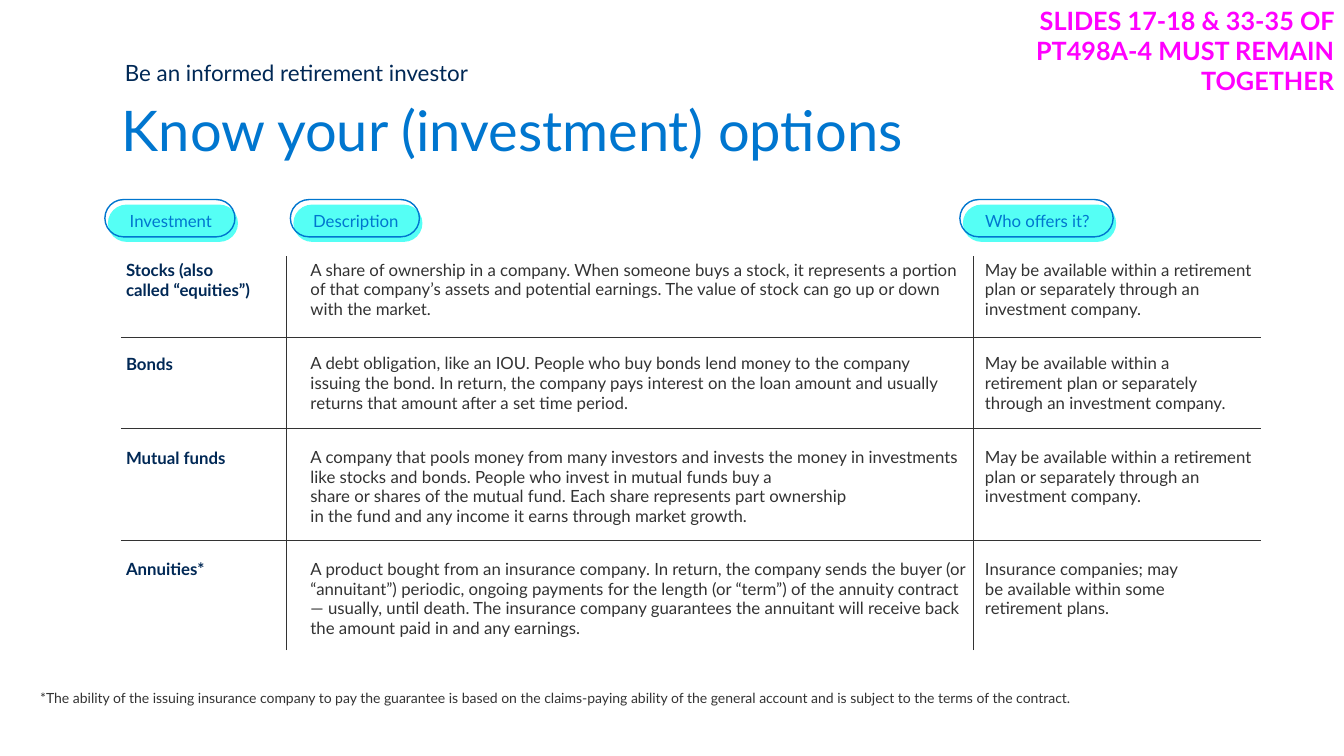
from pptx import Presentation
from pptx.dml.color import RGBColor
from pptx.enum.shapes import MSO_CONNECTOR, MSO_SHAPE
from pptx.enum.text import PP_ALIGN
from pptx.oxml.ns import qn
from pptx.util import Inches, Pt
from lxml import etree

LINE = MSO_CONNECTOR.STRAIGHT
PILL = MSO_SHAPE.ROUNDED_RECTANGLE
LEFT, MID, RIGHT = PP_ALIGN.LEFT, PP_ALIGN.CENTER, PP_ALIGN.RIGHT
NAVY = RGBColor(0x00, 0x28, 0x55)
BLUE = RGBColor(0x00, 0x76, 0xCF)
AQUA = RGBColor(0x55, 0xFF, 0xF5)
GRAY = RGBColor(0x33, 0x33, 0x33)
PINK = RGBColor(0xFF, 0x00, 0xFF)

deck = Presentation()
deck.slide_width, deck.slide_height = Inches(13.33), Inches(7.5)
slide = deck.slides.add_slide(deck.slide_layouts[6])
shapes = slide.shapes


def style(para, size, color, bold=False):
    para.font.name = "Lato"
    para.font.size = Pt(size)
    para.font.color.rgb = color
    para.font.bold = bold


def label(text, box, size, color, bold=False, align=LEFT):
    frame = shapes.add_textbox(*map(Inches, box)).text_frame
    frame.word_wrap = True
    para = frame.paragraphs[0]
    para.text = text
    para.alignment = align
    style(para, size, color, bold)
    return para


label("*The ability of the issuing insurance company to pay the guarantee is based on "
      "the claims-paying ability of the general account and is subject to the terms of "
      "the contract.", (0.3, 6.79, 11.78, 0.27), 10, GRAY)
label("Be an informed retirement investor", (1.14, 0.54, 6.01, 0.58), 16, NAVY)
title = label("Know your (investment) options", (1.11, 0.87, 11.09, 1.03), 40, BLUE)
title.line_spacing = Pt(50)

fund = ("May be available within a retirement plan or separately "
        "through an investment company.")
rows = [
    ("Stocks (also \vcalled “equities”)",
     "A share of ownership in a company. When someone buys a stock, it represents a "
     "portion of that company’s assets and potential earnings. The value of stock can "
     "go up or down with the market.", fund),
    ("Bonds",
     "A debt obligation, like an IOU. People who buy bonds lend money to the company "
     "issuing the bond. In return, the company pays interest on the loan amount and "
     "usually returns that amount after a set time period.", fund),
    ("Mutual funds",
     "A company that pools money from many investors and invests the money in "
     "investments like stocks and bonds. People who invest in mutual funds buy a \v"
     "share or shares of the mutual fund. Each share represents part ownership \v"
     "in the fund and any income it earns through market growth.", fund),
    ("Annuities*",
     "A product bought from an insurance company. In return, the company sends the "
     "buyer (or “annuitant”) periodic, ongoing payments for the length (or “term”) of "
     "the annuity contract — usually, until death. The insurance company guarantees "
     "the annuitant will receive back the amount paid in and any earnings.",
     "Insurance companies; may \vbe available within some \vretirement plans."),
]
wide = (1.87, 6.69, 3.01)
tall = (0.93, 0.93, 1.11, 1.37)
gaps = (0.09, 0.35, 0.09, 0.09)
table = shapes.add_table(len(rows), len(wide), Inches(1.15), Inches(2.51),
                         Inches(sum(wide)), Inches(sum(tall))).table
table.first_row = table.horz_banding = False
for col, width in zip(table.columns, wide):
    col.width = Inches(width)
for r, (row, height, gap) in enumerate(zip(rows, tall, gaps)):
    table.rows[r].height = Inches(height)
    for c, text in enumerate(row):
        cell = table.cell(r, c)
        cell.fill.background()
        cell.margin_left = Inches(0.06 if c else 0.1)
        cell.margin_right = Inches(gap)
        cell.margin_top, cell.margin_bottom = Inches(0.07), Inches(0.13)
        para = cell.text_frame.paragraphs[0]
        para.text = text
        para.space_before = Pt(7.3)
        if c:
            para.line_spacing = Pt(14)
        style(para, 12, GRAY if c else NAVY, not c)

rules = [(1.2, y, 12.51, y) for y in (3.35, 4.25, 5.36)]
rules += [(x, 6.45, x, 2.54) for x in (2.84, 9.65)]
for ends in rules:
    rule = shapes.add_connector(LINE, *map(Inches, ends))
    rule.line.color.rgb = GRAY
    rule.line.width = Pt(0.5)
    etree.SubElement(rule._element.spPr, qn("a:effectLst"))

heads = [("Investment", 1.04, 1.29), ("Description", 2.88, 1.28),
         ("Who offers it?", 9.52, 1.52)]
for text, x, width in heads:
    for dx, y, solid in ((0.03, 2.03, True), (0, 1.98, False)):
        pill = shapes.add_shape(PILL, Inches(x + dx), Inches(y),
                                Inches(width), Inches(0.37))
        pill.adjustments[0] = 0.5
        pill.shadow.inherit = False
        if solid:
            pill.fill.solid()
            pill.fill.fore_color.rgb = AQUA
            pill.line.fill.background()
        else:
            pill.fill.background()
            pill.line.color.rgb = BLUE
            pill.line.width = Pt(1)
    head = label(text, (x + width / 2 - 0.76, 2.02, 1.54, 0.31), 12, BLUE, align=MID)
    head.line_spacing = 1.1
    head.space_after = Pt(4)

label("SLIDES 17-18 & 33-35 OF PT498A-4 MUST REMAIN TOGETHER",
      (9.03, 0, 4.3, 0.71), 18, PINK, True, RIGHT)

deck.save("out.pptx")
